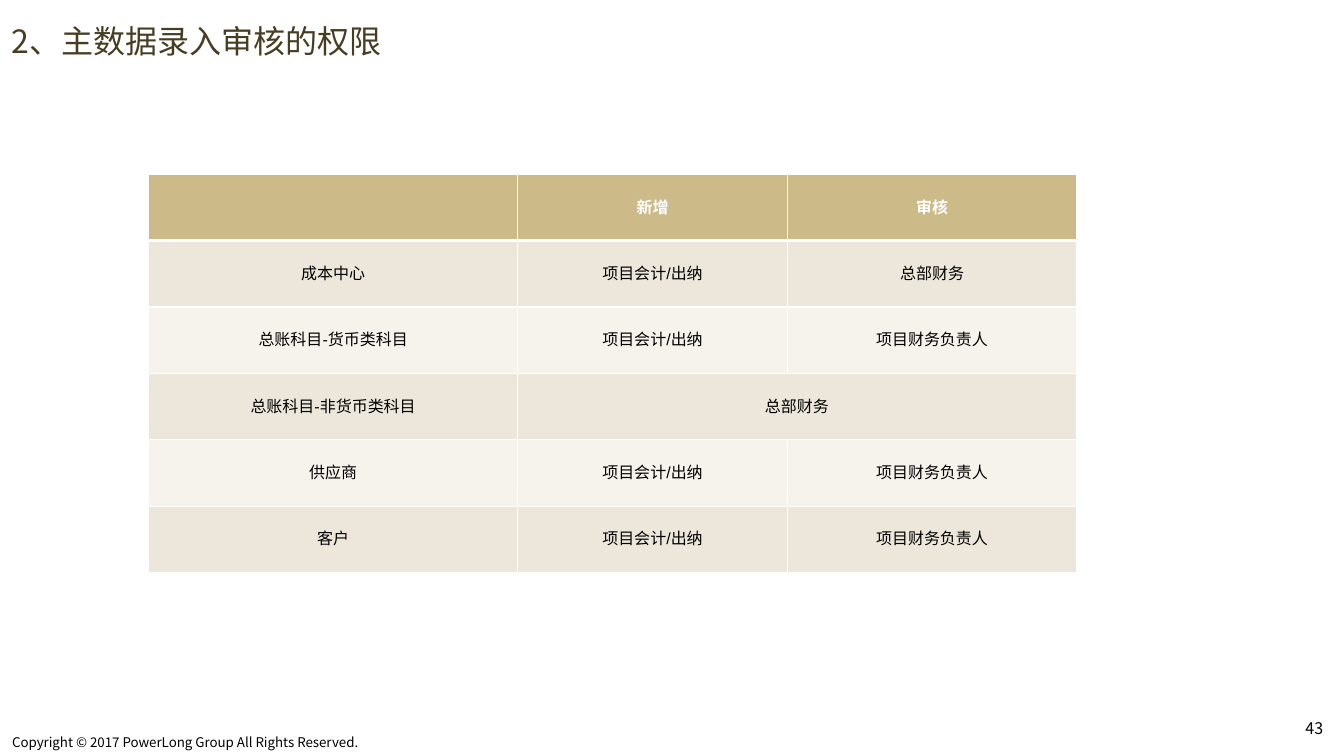
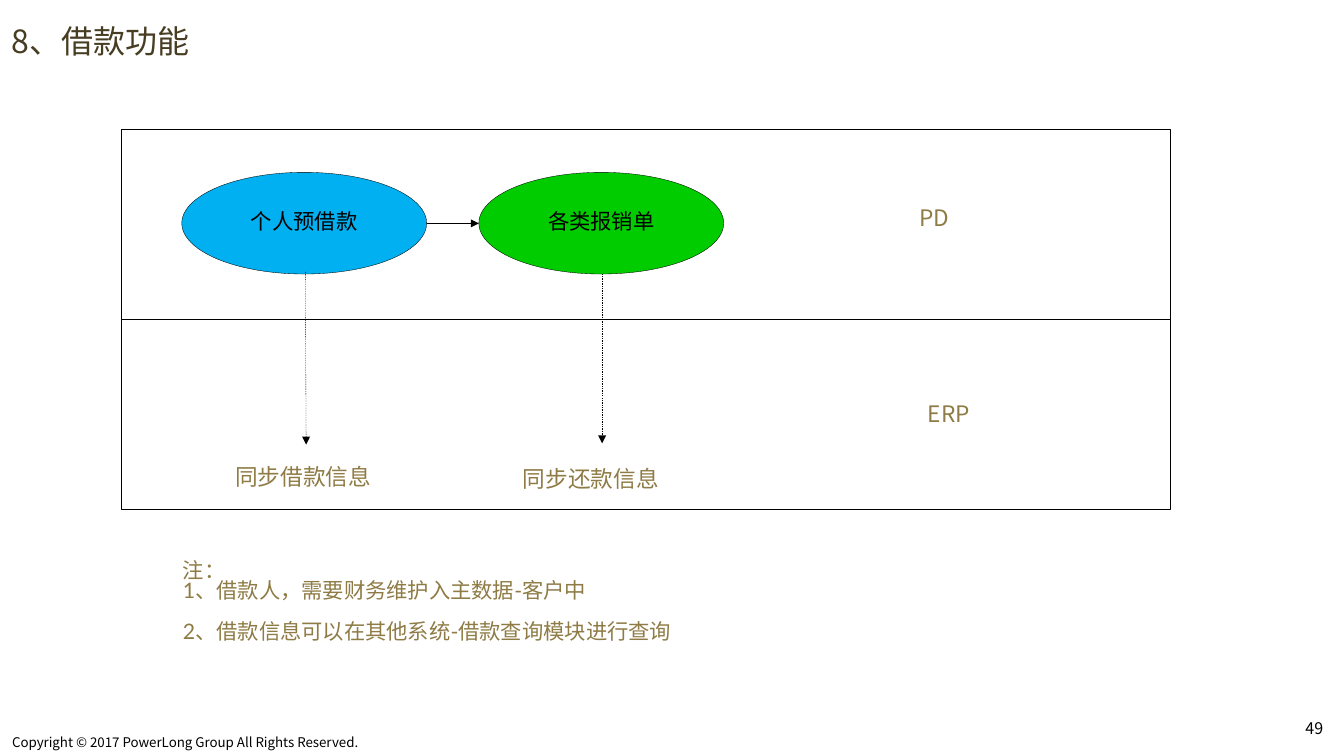
from dataclasses import dataclass

import pptx
import pptx.dml.color
import pptx.enum.dml
import pptx.enum.shapes
import pptx.enum.text
import pptx.oxml
import pptx.oxml.ns
import pptx.util

Cm = pptx.util.Cm
Pt = pptx.util.Pt
qn = pptx.oxml.ns.qn
SHAPE = pptx.enum.shapes.MSO_SHAPE
ANCHOR = pptx.enum.text.MSO_ANCHOR
CENTER = pptx.enum.text.PP_ALIGN.CENTER


@dataclass(frozen=True)
class Theme:
    # Colours
    title: str = "473D22"
    accent: str = "8E7B45"
    black: str = "000000"
    white: str = "FFFFFF"
    header: str = "CCBB88"
    bands: tuple = ("ECE7DA", "F6F3ED")
    loan: str = "00B0F0"
    expense: str = "00CC00"
    # Fonts
    cjk: str = "Noto Sans CJK SC"
    latin: str = "Arial"
    note_font: str = "Lato"
    # Type sizes and line widths in points
    title_size: int = 24
    label_size: int = 17
    body_size: int = 16
    small_size: int = 12
    footer_size: int = 10
    hairline: float = 0.25
    border: int = 1
    header_border: int = 3
    spacing: float = 0.8


THEME = Theme()
COPYRIGHT = "Copyright © 2017 PowerLong Group All Rights Reserved."


# Text and line helpers
def rgb(value):
    return pptx.dml.color.RGBColor.from_string(value)


def write(para, text, size, color, font=THEME.cjk, bold=False, align=None,
          spacing=THEME.spacing):
    para.text = text
    para.alignment = align
    para.line_spacing = spacing
    para.font.size = Pt(size)
    para.font.bold = bold
    para.font.color.rgb = rgb(color)
    para.font.name = font
    properties = para.font._element
    east_asian = properties.makeelement(qn("a:ea"), {"typeface": THEME.cjk})
    properties.find(qn("a:latin")).addnext(east_asian)


def add_box(page, place, insets=(0.25, 0.13), anchor=ANCHOR.TOP):
    frame = page.shapes.add_textbox(*map(Cm, place)).text_frame
    frame.word_wrap = True
    frame.vertical_anchor = anchor
    frame.margin_left = frame.margin_right = Cm(insets[0])
    frame.margin_top = frame.margin_bottom = Cm(insets[1])
    return frame


def add_label(page, place, text):
    frame = add_box(page, place, (0.28, 0.13), ANCHOR.MIDDLE)
    write(frame.paragraphs[0], text, THEME.label_size, THEME.accent)


def add_shape(page, kind, place, fill):
    shape = page.shapes.add_shape(kind, *map(Cm, place))
    shape.shadow.inherit = False
    shape.fill.solid()
    shape.fill.fore_color.rgb = rgb(fill)
    shape.line.color.rgb = rgb(THEME.black)
    shape.line.width = Pt(THEME.hairline)
    return shape


def add_step(page, place, text, fill):
    frame = add_shape(page, SHAPE.OVAL, place, fill).text_frame
    frame.vertical_anchor = ANCHOR.MIDDLE
    write(frame.paragraphs[0], text, THEME.body_size, THEME.black,
          THEME.latin, align=CENTER)


def add_arrow(page, start, end, dashed=False):
    arrow = page.shapes.add_connector(
        pptx.enum.shapes.MSO_CONNECTOR.STRAIGHT, *map(Cm, start + end))
    arrow.line.color.rgb = rgb(THEME.black)
    arrow.line.width = Pt(THEME.hairline)
    if dashed:
        arrow.line.dash_style = pptx.enum.dml.MSO_LINE.DASH
    line = arrow.line._get_or_add_ln()
    line.append(line.makeelement(qn("a:tailEnd"), {"type": "triangle"}))
    line.addnext(line.makeelement(qn("a:effectLst"), {}))


# Table helpers
def set_borders(cell, row):
    properties = cell._tc.get_or_add_tcPr()
    for side in "LRTB":
        thick = (row, side) in ((0, "B"), (1, "T"))
        width = Pt(THEME.header_border if thick else THEME.border)
        properties.append(pptx.oxml.parse_xml(
            f'<a:ln{side} {pptx.oxml.ns.nsdecls("a")} w="{width}"><a:solidFill>'
            f'<a:srgbClr val="{THEME.white}"/></a:solidFill></a:ln{side}>'))


def add_table(page, place, widths, rows):
    table = page.shapes.add_table(len(rows), len(widths), *map(Cm, place)).table
    for column, width in zip(table.columns, widths):
        column.width = Cm(width)
    for r, row in enumerate(rows):
        head = r == 0
        for c, text in enumerate(row):
            cell = table.cell(r, c)
            set_borders(cell, r)
            cell.fill.solid()
            cell.fill.fore_color.rgb = rgb(THEME.header if head else THEME.bands[(r - 1) % 2])
            cell.vertical_anchor = ANCHOR.MIDDLE
            if text:
                write(cell.text_frame.paragraphs[0], text, THEME.small_size,
                      THEME.white if head else THEME.black, THEME.latin, head, CENTER)
            elif text is None:  # joined to the cell on its left
                table.cell(r, c - 1).merge(cell)


# Parts shared by all slides
def add_page(deck, title, number):
    page = deck.slides.add_slide(deck.slide_layouts[6])
    footer = add_box(page, (0, 19.34, 12.52, 0.66), (0.32, 0.16))
    write(footer.paragraphs[0], COPYRIGHT, THEME.footer_size, THEME.black)
    counter = add_box(page, (34.29, 18.97, 1.27, 1.03))
    write(counter.paragraphs[0], str(number), THEME.small_size, THEME.black)
    heading = add_box(page, (0, 0, 35.56, 2.16), (0.31, 0.15), ANCHOR.MIDDLE)
    write(heading.paragraphs[0], title, THEME.title_size, THEME.title, spacing=1.0)
    return page


# Slides
def build_permissions(deck):
    page = add_page(deck, "2、主数据录入审核的权限", 43)
    entry, review = "项目会计/出纳", "项目财务负责人"
    add_table(page, (3.94, 4.61, 24.54, 10.54), (9.75, 7.15, 7.64), (
        ("", "新增", "审核"),
        ("成本中心", entry, "总部财务"),
        ("总账科目-货币类科目", entry, review),
        ("总账科目-非货币类科目", "总部财务", None),
        ("供应商", entry, review),
        ("客户", entry, review),
    ))


def build_loans(deck):
    page = add_page(deck, "8、借款功能", 49)

    # Two system lanes
    for top in (8.45, 3.42):
        add_shape(page, SHAPE.RECTANGLE, (3.2, top, 27.76, 5.03), THEME.white)
    add_label(page, (24.04, 5.28, 2.01, 1.07), "PD")
    add_label(page, (24.27, 10.48, 2.01, 1.07), "ERP")

    # Steps and the data they pass on
    add_step(page, (4.81, 4.56, 6.48, 2.69), "个人预借款", THEME.loan)
    add_step(page, (12.67, 4.56, 6.48, 2.69), "各类报销单", THEME.expense)
    add_arrow(page, (11.3, 5.91), (12.67, 5.91))
    add_arrow(page, (8.08, 7.19), (8.1, 11.76), dashed=True)
    add_arrow(page, (15.93, 7.24), (15.93, 11.73), dashed=True)
    add_label(page, (5.94, 11.48, 4.72, 2.41), "同步借款信息")
    add_label(page, (13.55, 11.53, 5.38, 2.41), "同步还款信息")

    # Notes
    frame = add_box(page, (4.59, 14.73, 13.56, 2.44))
    notes = ("注：", "1、借款人，需要财务维护入主数据-客户中",
             "2、借款信息可以在其他系统-借款查询模块进行查询")
    for index, text in enumerate(notes):
        para = frame.add_paragraph() if index else frame.paragraphs[0]
        write(para, text, THEME.body_size, THEME.accent, THEME.note_font)
    para.space_before = Pt(15)


def main():
    deck = pptx.Presentation()
    deck.slide_width, deck.slide_height = Cm(35.56), Cm(20)
    build_permissions(deck)
    build_loans(deck)
    deck.save("out.pptx")


if __name__ == "__main__":
    main()
